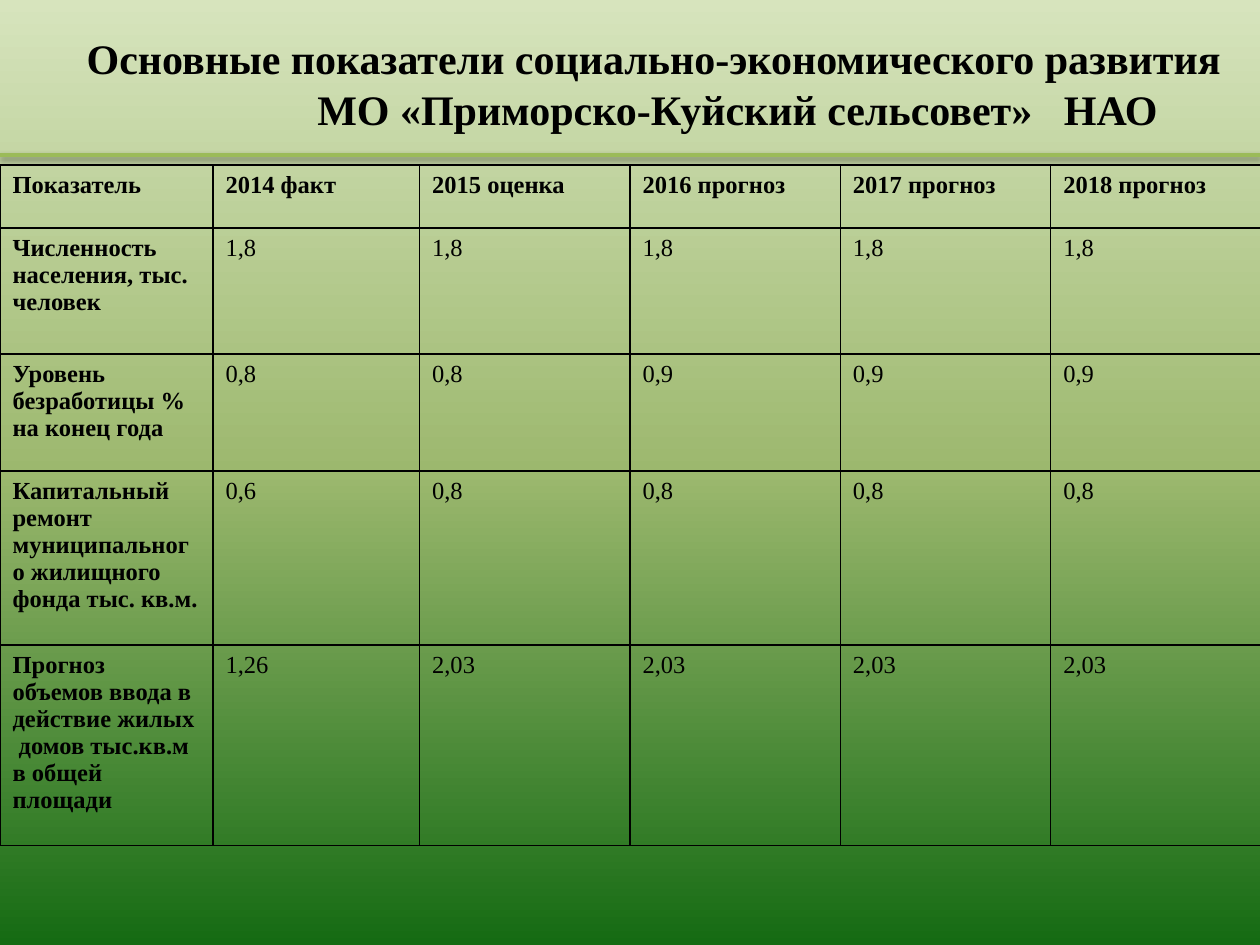
from copy import deepcopy
from lxml import etree
from pptx import Presentation, util as u
from pptx.dml.color import RGBColor
from pptx.enum import shapes, text
from pptx.oxml import parse_xml
from pptx.oxml.ns import nsdecls, qn

BLACK = RGBColor(0, 0, 0)
RULE_GREEN = RGBColor(0x9B, 0xBB, 0x59)
BACKGROUND = [
    (0, RGBColor(0xD7, 0xE4, 0xBD)),
    (0.5, RGBColor(0x9C, 0xB8, 0x6E)),
    (1, RGBColor(0x15, 0x6B, 0x13)),
]
COLUMNS = [1.69, 1.64] + [1.67] * 4
ROWS = [
    (0.5, ["Показатель", "2014 факт", "2015 оценка",
           "2016 прогноз", "2017 прогноз", "2018 прогноз"]),
    (1, ["Численность населения, тыс. человек"] + ["1,8"] * 5),
    (0.93, ["Уровень безработицы % на конец года"] + ["0,8"] * 2 + ["0,9"] * 3),
    (1.38, ["Капитальный ремонт муниципального жилищного фонда тыс. кв.м.",
            "0,6"] + ["0,8"] * 4),
    (1.59, ["Прогноз объемов ввода в действие жилых  домов тыс.кв.м в общей площади",
            "1,26"] + ["2,03"] * 4),
]


def style(r, size, bold):
    r.font.name = "Times New Roman"
    r.font.size = u.Pt(size)
    r.font.bold = bold
    r.font.color.rgb = BLACK


def add_borders(cell):
    pr = cell._tc.get_or_add_tcPr()
    for i, side in enumerate(("lnL", "lnR", "lnT", "lnB")):
        pr.insert(i, parse_xml(
            f'<a:{side} {nsdecls("a")} w="{u.Pt(1)}"><a:solidFill>'
            f'<a:srgbClr val="{BLACK}"/></a:solidFill></a:{side}>'))


prs = Presentation()
prs.slide_width, prs.slide_height = u.Inches(10), u.Inches(7.5)
s = prs.slides.add_slide(prs.slide_layouts[6])

fill = s.background.fill
fill.gradient()
fill.gradient_angle = 270
stops = next(s._element.iter(qn("a:gsLst")))
stops.append(deepcopy(stops[0]))
for stop, (position, color) in zip(fill.gradient_stops, BACKGROUND):
    stop.position = position
    stop.color.rgb = color

rule_y = u.Inches(1.23)
rule = s.shapes.add_connector(shapes.MSO_CONNECTOR.STRAIGHT,
                              prs.slide_width, rule_y, 0, rule_y)
rule.line.color.rgb = RULE_GREEN
rule.line.width = u.Pt(2)
effects = etree.SubElement(rule._element.spPr, qn("a:effectLst"))
effects.append(parse_xml(
    f'<a:outerShdw {nsdecls("a")} blurRad="{u.Pt(3.1)}" dist="{u.Pt(1.6)}" '
    f'dir="5400000" rotWithShape="0"><a:srgbClr val="{BLACK}">'
    '<a:alpha val="38000"/></a:srgbClr></a:outerShdw>'))

title = s.shapes.add_textbox(u.Inches(0.59), u.Inches(0.21),
                             u.Inches(9.33), u.Inches(0.9))
tf = title.text_frame
tf.word_wrap = False
tf.auto_size = text.MSO_AUTO_SIZE.SHAPE_TO_FIT_TEXT
tf.text = "Основные показатели социально-экономического развития"
p = tf.add_paragraph()
p._p.get_or_add_pPr().set("marL", str(u.Inches(1.83)))
for part in ("МО «Приморско-Куйский сельсовет»", " ", "НАО"):
    p.add_run().text = part
p.runs[1]._r.get_or_add_rPr().set("spc", "1200")
for p in tf.paragraphs:
    p.alignment = text.PP_ALIGN.LEFT
    for r in p.runs:
        style(r, 24, True)

frame = s.shapes.add_table(len(ROWS), len(COLUMNS), 0, u.Inches(1.31),
                           prs.slide_width, u.Inches(5.4))
table = frame.table
table.first_row = table.horz_banding = False
for column, width in zip(table.columns, COLUMNS):
    column.width = u.Inches(width)
for i, (height, values) in enumerate(ROWS):
    table.rows[i].height = u.Inches(height)
    for j, value in enumerate(values):
        cell = table.cell(i, j)
        cell.text_frame.text = value
        cell.fill.background()
        add_borders(cell)
        style(cell.text_frame.paragraphs[0].runs[0], 14, i == 0 or j == 0)

prs.save("out.pptx")
